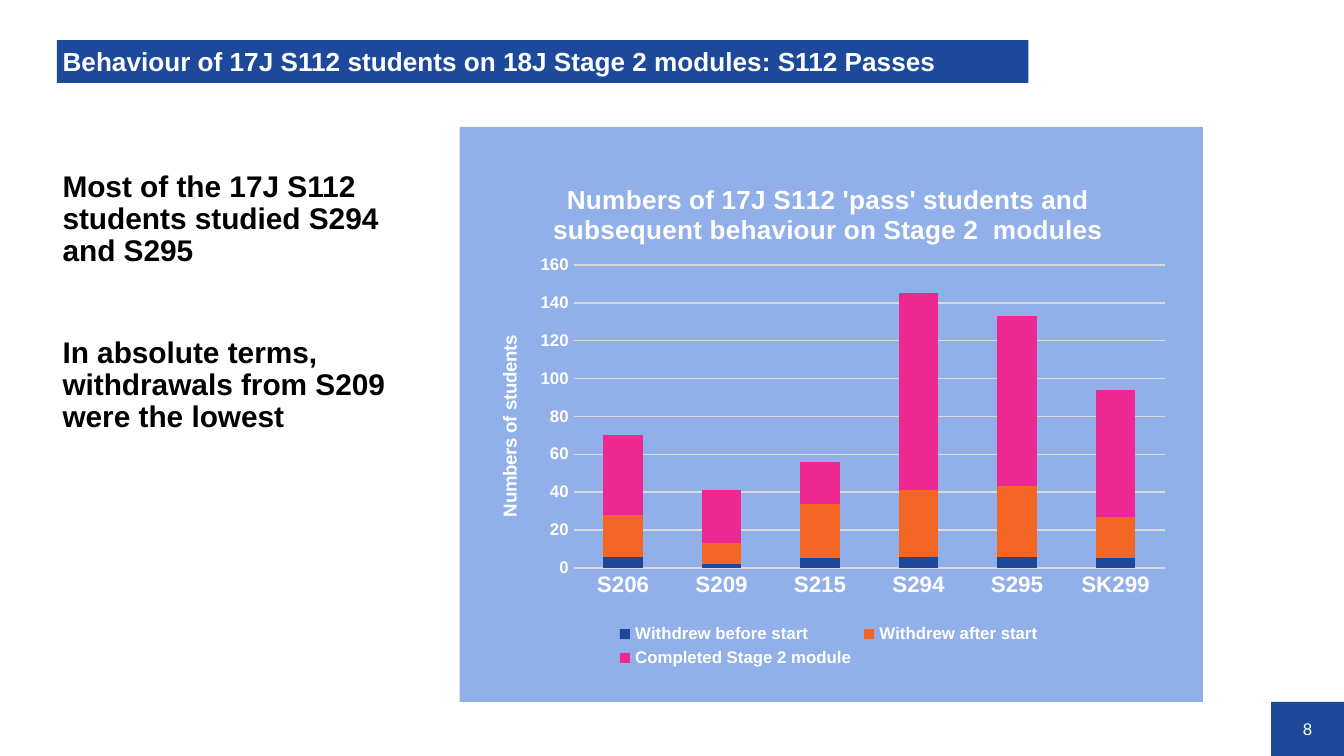
from lxml.etree import SubElement
from pptx import Presentation
from pptx.chart.data import CategoryChartData
from pptx.dml.color import RGBColor
from pptx.enum.chart import XL_CHART_TYPE, XL_LEGEND_POSITION, XL_TICK_MARK
from pptx.enum.shapes import MSO_SHAPE
from pptx.enum.text import MSO_ANCHOR, MSO_AUTO_SIZE, PP_ALIGN
from pptx.oxml import parse_xml
from pptx.oxml.ns import nsdecls, qn
from pptx.util import Pt

NAVY, SKY, GREY, WHITE, BLACK = "1D499B", "91B0EA", "D9D9D9", "FFFFFF", "000000"


def hue(code):
    return RGBColor.from_string(code)


def apply(item, **values):
    """Set each named attribute on the item."""
    for name, value in values.items():
        setattr(item, name, value)


def place(node, index, **spots):
    """Give a chart part a manual layout, in fractions of the chart."""
    for old in node.findall(qn("c:layout")):
        node.remove(old)
    layout = parse_xml(f"<c:layout {nsdecls('c')}/>")
    manual = SubElement(layout, qn("c:manualLayout"))
    if "w" in spots:
        if node.tag == qn("c:plotArea"):
            SubElement(manual, qn("c:layoutTarget")).set("val", "inner")
    for key in "xy":
        SubElement(manual, qn(f"c:{key}Mode")).set("val", "edge")
    for key, value in spots.items():
        SubElement(manual, qn(f"c:{key}")).set("val", str(value))
    node.insert(index, layout)


class Page:
    face = "Arial"

    def __init__(self, deck):
        self.slide = deck.slides.add_slide(deck.slide_layouts[1])
        self.shapes = self.slide.shapes

    def font(self, font, size, color=WHITE, bold=True):
        apply(font, name=self.face, size=Pt(size), bold=bold)
        font.color.rgb = hue(color)

    def move(self, shape, box):
        for name, value in zip(("left", "top", "width", "height"), box):
            setattr(shape, name, Pt(value))

    def frame(self, shape, insets, anchor):
        frame = shape.text_frame
        sides = ("margin_left", "margin_top", "margin_right", "margin_bottom")
        apply(frame, word_wrap=True, auto_size=MSO_AUTO_SIZE.NONE,
              vertical_anchor=anchor, **dict(zip(sides, map(Pt, insets))))
        return frame

    def panel(self, box, color):
        shape = self.shapes.add_shape(MSO_SHAPE.RECTANGLE, *map(Pt, box))
        shape.shadow.inherit = False
        shape.fill.solid()
        shape.fill.fore_color.rgb = hue(color)
        shape.line.fill.background()
        return shape

    def number(self, box, text):
        frame = self.frame(self.panel(box, NAVY), (0, 0, 0, 0), MSO_ANCHOR.MIDDLE)
        para = frame.paragraphs[0]
        apply(para, text=text, alignment=PP_ALIGN.CENTER)
        self.font(para.font, 9, bold=False)

    def title(self, box, text):
        shape = self.shapes.title
        self.move(shape, box)
        shape.fill.solid()
        shape.fill.fore_color.rgb = hue(NAVY)
        frame = self.frame(shape, (3, 1.5, 0, 0), MSO_ANCHOR.MIDDLE)
        para = frame.paragraphs[0]
        apply(para, text=text, alignment=PP_ALIGN.LEFT, line_spacing=0.9)
        self.font(para.font, 14)

    def body(self, box, items):
        shape = self.slide.placeholders[1]
        self.move(shape, box)
        frame = self.frame(shape, (3, 24, 3, 3), MSO_ANCHOR.TOP)
        for i, text in enumerate(items):
            para = frame.add_paragraph() if i else frame.paragraphs[0]
            props = para._p.get_or_add_pPr()
            props.set("marL", "0")
            props.set("indent", "0")
            SubElement(props, qn("a:buNone"))
            apply(para, text=text, alignment=PP_ALIGN.LEFT, line_spacing=0.9,
                  space_before=Pt(37 if i else 0), space_after=Pt(0))
            self.font(para.font, 16, BLACK)

    def label(self, owner, text, size):
        """Title a chart or an axis."""
        owner.has_title = True
        title = owner.chart_title if hasattr(owner, "chart_title") else owner.axis_title
        para = title.text_frame.paragraphs[0]
        run = para.add_run()
        run.text = text
        self.font(run.font, size)
        return title

    def chart(self, box, title, unit, cats, rows):
        data = CategoryChartData()
        data.categories = cats
        for name, _, values in rows:
            data.add_series(name, values)
        chart = self.shapes.add_chart(
            XL_CHART_TYPE.COLUMN_STACKED, *map(Pt, box), data).chart
        self.font(chart.font, 10, BLACK, False)
        head = self.label(chart, title, 14)
        place(head._element, 1, x=0.11, y=0.045)

        plot = chart.plots[0]
        apply(plot, gap_width=150, overlap=100, vary_by_categories=False)
        for series, (_, color, _) in zip(plot.series, rows):
            series.format.fill.solid()
            series.format.fill.fore_color.rgb = hue(color)
        place(chart.element.find(".//" + qn("c:plotArea")), 0,
              x=0.146, y=0.213, w=0.833, h=0.586)

        across, up = chart.category_axis, chart.value_axis
        for axis, size in ((across, 12), (up, 9)):
            apply(axis, major_tick_mark=XL_TICK_MARK.NONE,
                  minor_tick_mark=XL_TICK_MARK.NONE)
            self.font(axis.tick_labels.font, size)
        apply(up, minimum_scale=0, maximum_scale=160, major_unit=20,
              has_major_gridlines=True)
        self.label(up, unit, 10)
        for line in (across.format.line, up.major_gridlines.format.line):
            line.color.rgb = hue(GREY)
            line.width = Pt(0.75)
        up.format.line.fill.background()

        chart.has_legend = True
        legend = chart.legend
        apply(legend, position=XL_LEGEND_POSITION.BOTTOM, include_in_layout=False)
        self.font(legend.font, 9)
        place(legend._element, 1, x=0.2, y=0.9, w=0.61, h=0.1)


def main():
    deck = Presentation()
    apply(deck, slide_width=Pt(720), slide_height=Pt(405))
    page = Page(deck)
    page.title((30.5, 21.5, 520.5, 23),
               "Behaviour of 17J S112 students on 18J Stage 2 modules: S112 Passes")
    page.body((30.5, 68, 203, 308), [
        "Most of the 17J S112 students studied S294 and S295",
        "In absolute terms, withdrawals from S209 were the lowest"])
    page.panel((246.25, 68, 398.25, 308), SKY)
    page.chart(
        (252, 83, 380, 277),
        "Numbers of 17J S112 'pass' students and subsequent behaviour on Stage 2  modules",
        "Numbers of students",
        ["S206", "S209", "S215", "S294", "S295", "SK299"],
        [("Withdrew before start", NAVY, (6, 2, 5, 6, 6, 5)),
         ("Withdrew after start", "F26522", (22, 11, 29, 35, 37, 22)),
         ("Completed Stage 2 module", "ED2891", (42, 28, 22, 104, 90, 67))])
    page.number((681, 376, 39, 29), "8")
    deck.save("out.pptx")


if __name__ == "__main__":
    main()
